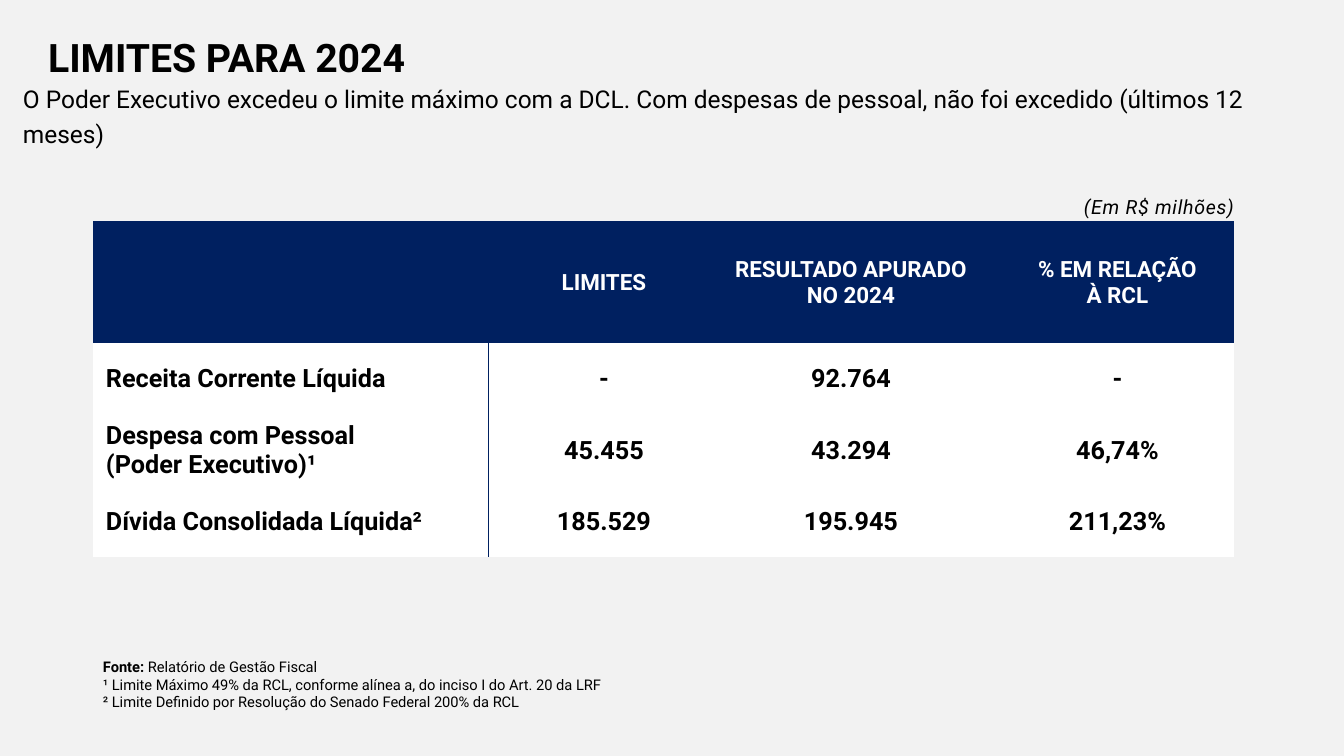
from pptx import Presentation
from pptx import util as u
from pptx.dml.color import RGBColor
from pptx.enum import shapes, text
from pptx.oxml.ns import qn
from lxml import etree

# Content
TITLE = "LIMITES PARA 2024"
LEAD = ("O Poder Executivo excedeu o limite máximo com a DCL. "
        "Com despesas de pessoal, não foi excedido (últimos 12 meses)")
UNIT = "(Em R$ milhões)"
ROWS = [
    ("", "LIMITES", "RESULTADO APURADO\nNO 2024", "% EM RELAÇÃO\nÀ RCL"),
    ("Receita Corrente Líquida", "-", "92.764", "-"),
    ("Despesa com Pessoal\n(Poder Executivo)¹", "45.455", "43.294", "46,74%"),
    ("Dívida Consolidada Líquida²", "185.529", "195.945", "211,23%"),
]
NOTES = [
    [("Fonte: ", True), ("Relatório de Gestão Fiscal", False)],
    [("¹ Limite Máximo 49% da RCL, conforme alínea a, do inciso I do Art. 20 da LRF", False)],
    [("² Limite Definido por Resolução do Senado Federal 200% da RCL", False)],
]

# Look and measures in px
NAVY = RGBColor(0x00, 0x20, 0x60)
BLACK = RGBColor(0, 0, 0)
WHITE = RGBColor(255, 255, 255)
GREY = RGBColor(0xF2, 0xF2, 0xF2)
FONT = "Roboto"
WIDE, HIGH = 1344, 756
LEFT, TOP = 93, 221
COLS = [414, 194, 300, 233]
TALL = [122, 71, 72, 71]
RULE = 488
PLAIN = "{2D5ABB26-0587-4C30-8999-92F81FD0307C}"
LEFT_AL, MID, RIGHT = (text.PP_ALIGN.LEFT, text.PP_ALIGN.CENTER,
                       text.PP_ALIGN.RIGHT)


def px(n):
    return u.Emu(round(n * 914400 / 100.8))


def style(run, size, color=BLACK, bold=False, italic=False):
    font = run.font
    font.name, font.size, font.bold, font.italic = FONT, u.Pt(size), bold, italic
    font.color.rgb = color


def fill(frame, words, size, align, gap=None, **look):
    frame.text = words
    for para in frame.paragraphs:
        para.alignment = align
        para.line_spacing = gap
        for run in para.runs:
            style(run, size, **look)


def box(x, y, w, h, anchor=text.MSO_ANCHOR.TOP):
    frame = slide.shapes.add_textbox(px(x), px(y), px(w), px(h)).text_frame
    frame.word_wrap = True
    frame.vertical_anchor = anchor
    return frame


prs = Presentation()
prs.slide_width, prs.slide_height = px(WIDE), px(HIGH)
slide = prs.slides.add_slide(prs.slide_layouts[5])
slide.background.fill.solid()
slide.background.fill.fore_color.rgb = GREY

# Title and lead
head = slide.shapes.title
head.left, head.top, head.width, head.height = map(px, (38, 20, 791, 80))
head.text_frame.word_wrap = True
head.text_frame.auto_size = text.MSO_AUTO_SIZE.NONE
head.text_frame.vertical_anchor = text.MSO_ANCHOR.MIDDLE
fill(head.text_frame, TITLE, 28, LEFT_AL, 0.9, bold=True)
fill(box(13, 84, 1315, 59, text.MSO_ANCHOR.MIDDLE), LEAD, 17.5, LEFT_AL, 1.2)

# Table of limits
grid = slide.shapes.add_table(len(ROWS), len(COLS), px(LEFT), px(TOP),
                              px(sum(COLS)), px(sum(TALL))).table
grid._tbl.tblPr.find(qn("a:tableStyleId")).text = PLAIN
for col, w in zip(grid.columns, COLS):
    col.width = px(w)
for r, (row, h) in enumerate(zip(ROWS, TALL)):
    grid.rows[r].height = px(h)
    for c, words in enumerate(row):
        cell = grid.cell(r, c)
        cell.fill.solid()
        cell.fill.fore_color.rgb = WHITE if r else NAVY
        cell.vertical_anchor = text.MSO_ANCHOR.MIDDLE
        cell.margin_left = px(1 if c else 13)
        cell.margin_right = cell.margin_top = px(1)
        cell.margin_bottom = 0
        fill(cell.text_frame, words, 18 if r else 16, MID if c else LEFT_AL,
             color=BLACK if r else WHITE, bold=True)

# Unit label
unit = box(1033, 185, 211, 42)
fill(unit, UNIT, 14, RIGHT, 1.2, italic=True)
unit.paragraphs[0].runs[0].font._element.set("spc", "50")

# Rule beside the row labels
rule = slide.shapes.add_connector(shapes.MSO_CONNECTOR.STRAIGHT, px(RULE),
                                  px(TOP + TALL[0]), px(RULE), px(TOP + sum(TALL)))
rule.line.color.rgb = NAVY
rule.line.width = u.Pt(0.5)
etree.SubElement(rule._element.spPr, qn("a:effectLst"))

# Source and notes
foot = box(93, 653, 780, 64)
for i, parts in enumerate(NOTES):
    para = foot.add_paragraph() if i else foot.paragraphs[0]
    for words, bold in parts:
        run = para.add_run()
        run.text = words
        style(run, 10.5, bold=bold)

prs.save("out.pptx")
